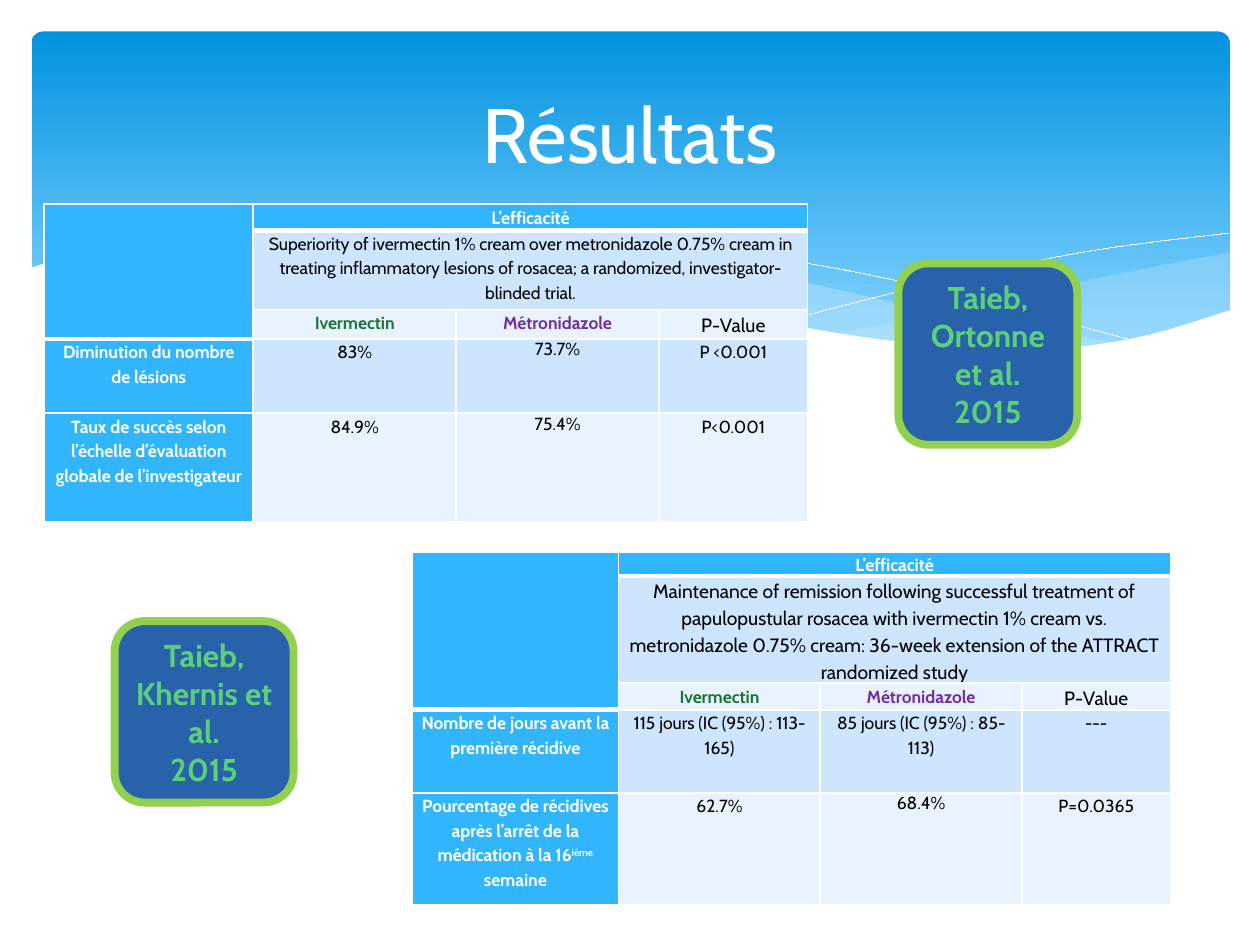
from dataclasses import dataclass
from itertools import product
from typing import NamedTuple, Optional

from lxml.etree import SubElement
from pptx import Presentation
from pptx.dml.color import RGBColor
from pptx.enum.shapes import MSO_SHAPE
from pptx.enum.text import MSO_ANCHOR, PP_ALIGN
from pptx.oxml.ns import qn
from pptx.util import Inches, Pt

WHITE = RGBColor(0xFF, 0xFF, 0xFF)
BLACK = RGBColor(0, 0, 0)
SKY_TOP = RGBColor(0x02, 0x93, 0xE0)
SKY_BOTTOM = RGBColor(0x83, 0xD3, 0xFE)
WAVE_BLUE = RGBColor(0xC6, 0xE7, 0xFC)
HEADER = RGBColor(0x31, 0xB6, 0xFD)
BAND_DARK = RGBColor(0xCE, 0xE5, 0xFE)
BAND_LIGHT = RGBColor(0xE8, 0xF3, 0xFF)
GREEN = RGBColor(0x21, 0x74, 0x36)
PURPLE = RGBColor(0x70, 0x30, 0xA0)
NAVY = RGBColor(0x28, 0x62, 0xAA)
LIME = RGBColor(0x92, 0xD0, 0x50)
MINT = RGBColor(0x5B, 0xD0, 0x78)

FONT = "Cabin"
BODY_SIZE = 10
CURVE_STEPS = 8
HAIRLINE = Pt(0.01)
HEADER_ROW, ARTICLE_ROW, DRUG_ROW = range(3)
LABEL_COL, IVERMECTIN_COL, METRONIDAZOLE_COL, P_VALUE_COL = range(4)
DRUG_COLORS = {(DRUG_ROW, IVERMECTIN_COL): GREEN, (DRUG_ROW, METRONIDAZOLE_COL): PURPLE}


class Point(NamedTuple):
    x: float
    y: float


@dataclass
class Wave:
    """Smooth edges, each given by its knots, then straight corners if filled."""
    edges: list[list[Point]]
    fill: Optional[RGBColor] = None
    opacity: int = 100
    corners: tuple[Point, ...] = ()


@dataclass
class Study:
    left: float
    top: float
    cols: list[float]
    rows: list[float]
    article: str
    article_size: int
    results: list[list[str]]
    single_spaced: set[tuple[int, int]]


@dataclass
class Badge:
    left: float
    top: float
    authors: str
    year: str = "2015"


def knots(*pairs: tuple[float, float]) -> list[Point]:
    return [Point(*pair) for pair in pairs]


LENS_TOP = knots((9.76, 2), (8.61, 2.23), (7.53, 2.48), (6.61, 2.65))
LENS_BOTTOM = knots((6.61, 2.65), (7.45, 2.75), (8.14, 2.78), (8.97, 2.7), (9.76, 2.47))
RIBBON_TOP = knots((8.93, 2.73), (7.75, 2.54), (6.29, 2.22), (5.02, 1.96), (3.8, 1.85),
                   (2.86, 1.91))
RIBBON_BOTTOM = knots((2.86, 1.91), (4.49, 2.22), (6.01, 2.55), (7.22, 2.74), (8.18, 2.78),
                      (8.93, 2.73))
FALLING_LINE = knots((3.09, 1.95), (4.33, 1.87), (5.82, 2), (7.27, 2.26), (9.07, 2.72))
RISING_LINE = knots((6.13, 2.57), (7.48, 2.23), (8.66, 1.99), (9.75, 1.85))
SHORE = knots((9.77, 2.46), (8.97, 2.69), (8.09, 2.77), (6.68, 2.65), (4.47, 2.2),
              (3.16, 1.94), (1.93, 1.84), (1.06, 1.89), (0.23, 2.13))

WAVES = [
    Wave([LENS_TOP, LENS_BOTTOM], WAVE_BLUE, 29),
    Wave([RIBBON_TOP, RIBBON_BOTTOM], WAVE_BLUE, 40),
    Wave([FALLING_LINE]),
    Wave([RISING_LINE]),
    Wave([SHORE], WHITE, corners=(Point(0.23, 3.29), Point(9.77, 3.29))),
]

STUDIES = [
    Study(0.35, 1.62, [1.66, 1.61, 1.61, 1.18], [0.21, 0.63, 0.23, 0.59, 0.86],
          "Superiority of ivermectin 1% cream over metronidazole 0.75% cream in treating "
          "inflammatory lesions of rosacea; a randomized, investigator-blinded trial.", 10,
          [["Diminution du nombre de lésions", "83%", "73.7%", "P <0.001"],
           ["Taux de succès selon l’échelle d’évaluation globale de l’investigateur",
            "84.9%", "75.4%", "P<0.001"]],
          {(3, METRONIDAZOLE_COL), (4, METRONIDAZOLE_COL)}),
    Study(3.27, 4.38, [1.64, 1.6, 1.6, 1.18], [0.19, 0.85, 0.21, 0.66, 0.89],
          "Maintenance of remission following successful treatment of papulopustular rosacea "
          "with ivermectin 1% cream vs. metronidazole 0.75% cream: 36-week extension of the "
          "ATTRACT randomized study", 11,
          [["Nombre de jours avant la première récidive", "115 jours (IC (95%) : 113-165)",
            "85 jours (IC (95%) : 85-113)", "---"],
           ["Pourcentage de récidives après l’arrêt de la médication à la 16^ième ^semaine",
            "62.7%", "68.4%", "P=0.0365"]],
          {(4, METRONIDAZOLE_COL)}),
]

BADGES = [Badge(7.13, 2.09, "Taieb, Ortonne et al."),
          Badge(0.91, 4.93, "Taieb, Khernis et al.")]


def smooth(edge: list[Point]) -> list[Point]:
    """Sample a Catmull-Rom spline that passes through every knot."""
    padded = [edge[0], *edge, edge[-1]]
    curve = [edge[0]]
    for quad in zip(padded, padded[1:], padded[2:], padded[3:]):
        for step in range(1, CURVE_STEPS + 1):
            t = step / CURVE_STEPS
            curve.append(Point(*(
                b + t * (c - a) / 2 + t**2 * (2 * a - 5 * b + 4 * c - d) / 2
                + t**3 * (3 * b - a - 3 * c + d) / 2
                for a, b, c, d in zip(*quad))))
    return curve


def write(p, text: str, size: float, color: RGBColor, bold: bool = False) -> None:
    """Fill a centred paragraph; text between carets is superscript."""
    p.alignment = PP_ALIGN.CENTER
    for i, part in enumerate(text.split("^")):
        r = p.add_run()
        r.text = part
        for name, value in {"name": FONT, "size": Pt(size), "bold": bold}.items():
            setattr(r.font, name, value)
        r.font.color.rgb = color
        if i % 2:
            r.font._element.set("baseline", "30000")


def add_round_rect(s, left: float, top: float, width: float, height: float):
    sp = s.shapes.add_shape(MSO_SHAPE.ROUNDED_RECTANGLE, Inches(left), Inches(top),
                            Inches(width), Inches(height))
    sp.shadow.inherit = False
    return sp


def draw_sky(s) -> None:
    sp = add_round_rect(s, 0.25, 0.25, 9.51, 2.7)
    sp.adjustments[0] = 0.034
    sp.line.fill.background()
    sp.fill.gradient()
    sp.fill.gradient_angle = 270
    for stop, place, color in zip(sp.fill.gradient_stops, (0, 0.9), (SKY_TOP, SKY_BOTTOM)):
        stop.position = place
        stop.color.rgb = color


def draw_wave(s, wave: Wave) -> None:
    outline = [point for edge in wave.edges for point in smooth(edge)]
    start, *rest = [(Inches(x), Inches(y)) for x, y in (*outline, *wave.corners)]
    builder = s.shapes.build_freeform(*start)
    builder.add_line_segments(rest, close=wave.fill is not None)
    sp = builder.convert_to_shape()
    sp.shadow.inherit = False
    if wave.fill is None:
        sp.fill.background()
        sp.line.color.rgb = WHITE
        sp.line.width = HAIRLINE
        return
    sp.line.fill.background()
    sp.fill.solid()
    sp.fill.fore_color.rgb = wave.fill
    if wave.opacity < 100:
        color = sp._element.spPr.find(qn("a:solidFill"))[0]
        SubElement(color, qn("a:alpha"), val=str(wave.opacity * 1000))


def style_cell(cell, fill: RGBColor, bottom: float) -> None:
    """Set margins, fill and white borders, with the bottom border in points."""
    for side, margin in {"left": 0.07, "right": 0.07, "top": 0, "bottom": 0}.items():
        setattr(cell, f"margin_{side}", Inches(margin))
    cell.fill.solid()
    cell.fill.fore_color.rgb = fill
    tc_pr = cell._tc.get_or_add_tcPr()
    for i, (side, width) in enumerate({"L": 1, "R": 1, "T": 1, "B": bottom}.items()):
        ln = SubElement(tc_pr, qn(f"a:ln{side}"), w=str(Pt(width)))
        SubElement(SubElement(ln, qn("a:solidFill")), qn("a:srgbClr"), val=str(WHITE))
        tc_pr.insert(i, ln)


def draw_study(s, study: Study) -> None:
    texts = [["", "L’efficacité", "", ""], ["", study.article, "", ""],
             ["", "Ivermectin", "Métronidazole", "P-Value"], *study.results]
    sizes = {(ARTICLE_ROW, IVERMECTIN_COL): study.article_size, (DRUG_ROW, P_VALUE_COL): 11}
    table = s.shapes.add_table(len(study.rows), len(study.cols), Inches(study.left),
                               Inches(study.top), Inches(sum(study.cols)),
                               Inches(sum(study.rows))).table
    for col, width in zip(table.columns, study.cols):
        col.width = Inches(width)
    for row, height in zip(table.rows, study.rows):
        row.height = Inches(height)

    for key in product(range(len(study.rows)), range(len(study.cols))):
        i, j = key
        cell, text = table.cell(i, j), texts[i][j]
        heading = i == HEADER_ROW or j == LABEL_COL
        band = BAND_DARK if i % 2 else BAND_LIGHT
        above_body = i == HEADER_ROW or key == (DRUG_ROW, LABEL_COL)
        style_cell(cell, HEADER if heading else band, 3 if above_body else 1)
        p = cell.text_frame.paragraphs[0]
        if not text:  # an empty cell would otherwise stretch its row
            SubElement(p._p, qn("a:endParaRPr"), sz=str(BODY_SIZE * 100))
            continue
        if key not in study.single_spaced:
            p.line_spacing = 1.15
        color = WHITE if heading else DRUG_COLORS.get(key, BLACK)
        write(p, text, sizes.get(key, BODY_SIZE), color, heading or key in DRUG_COLORS)

    table.cell(HEADER_ROW, LABEL_COL).merge(table.cell(DRUG_ROW, LABEL_COL))
    for i in (HEADER_ROW, ARTICLE_ROW):
        table.cell(i, IVERMECTIN_COL).merge(table.cell(i, P_VALUE_COL))


def draw_title(s, text: str) -> None:
    tf = s.shapes.add_textbox(Inches(0.5), Inches(0.37), Inches(9), Inches(1.37)).text_frame
    tf.word_wrap = True
    tf.vertical_anchor = MSO_ANCHOR.MIDDLE
    write(tf.paragraphs[0], text, 44, WHITE)


def draw_badge(s, badge: Badge) -> None:
    sp = add_round_rect(s, badge.left, badge.top, 1.42, 1.44)
    sp.fill.solid()
    sp.fill.fore_color.rgb = NAVY
    sp.line.color.rgb = LIME
    sp.line.width = Pt(4.5)
    tf = sp.text_frame
    tf.word_wrap = True
    write(tf.paragraphs[0], badge.authors, 18, MINT, True)
    write(tf.add_paragraph(), badge.year, 18, MINT, True)


def main() -> None:
    prs = Presentation()
    prs.slide_width, prs.slide_height = Inches(10), Inches(7.5)
    s = prs.slides.add_slide(prs.slide_layouts[6])
    draw_sky(s)
    for wave in WAVES:
        draw_wave(s, wave)
    draw_title(s, "Résultats")
    for study in STUDIES:
        draw_study(s, study)
    for badge in BADGES:
        draw_badge(s, badge)
    prs.save("out.pptx")


if __name__ == "__main__":
    main()
